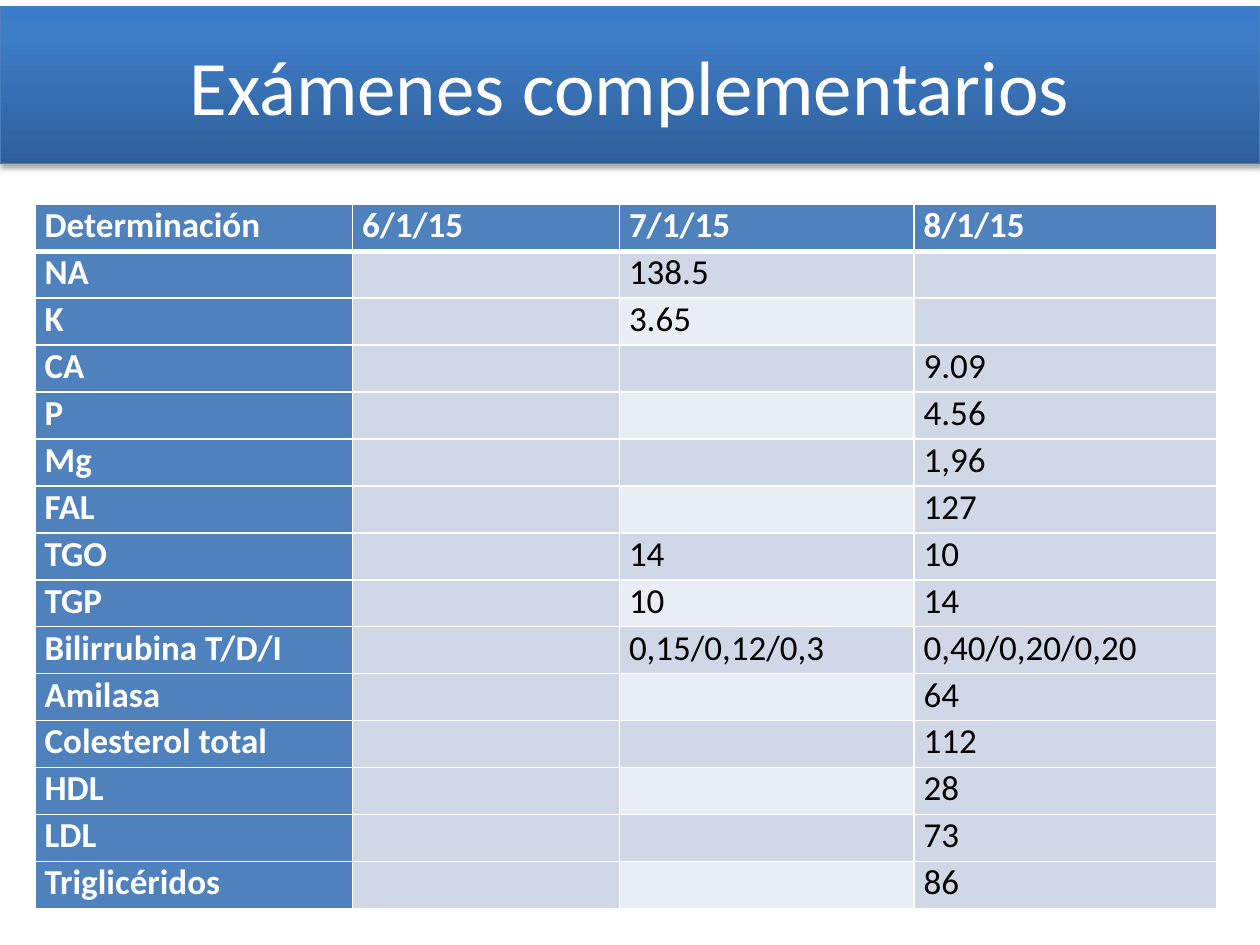
import pptx
import pptx.dml.color
import pptx.enum.shapes
import pptx.enum.text
import pptx.oxml.ns
import pptx.util
from lxml import etree
from copy import deepcopy

Cm = pptx.util.Cm
Pt = pptx.util.Pt
qn = pptx.oxml.ns.qn

FONT = "Calibri"
COLORS = {
    "white": "FFFFFF",
    "black": "000000",
    "header": "4F81BD",
    "band": "D0D8E8",
    "light_band": "E9EDF4",
    "title_line": "4B7EBC",
}
TITLE_STOPS = [(0, "2F5F99"), (0.8, "3D7CC7"), (1, "3A7CCB")]
COLUMN_WIDTHS = [6.4, 5.38, 5.94, 6.1]
ROW_HEIGHT = 0.946
RESULTS = [
    ("Determinación", "6/1/15", "7/1/15", "8/1/15"),
    ("NA", "", "138.5", ""),
    ("K", "", "3.65", ""),
    ("CA", "", "", "9.09"),
    ("P", "", "", "4.56"),
    ("Mg", "", "", "1,96"),
    ("FAL", "", "", "127"),
    ("TGO", "", "14", "10"),
    ("TGP", "", "10", "14"),
    ("Bilirrubina T/D/I", "", "0,15/0,12/0,3", "0,40/0,20/0,20"),
    ("Amilasa", "", "", "64"),
    ("Colesterol total", "", "", "112"),
    ("HDL", "", "", "28"),
    ("LDL", "", "", "73"),
    ("Triglicéridos", "", "", "86"),
]


def rgb(hex_color):
    return pptx.dml.color.RGBColor.from_string(hex_color)


def format_text(paragraph, size, color, bold=False):
    paragraph.font.size = Pt(size)
    for span in paragraph.runs:
        span.font.name = FONT
        span.font.size = Pt(size)
        span.font.bold = bold
        span.font.color.rgb = rgb(color)


def fill_gradient(shape, stops):
    shape.fill.gradient()
    shape.fill.gradient_angle = 90
    stop_list = shape.element.spPr.find(qn("a:gradFill")).find(qn("a:gsLst"))
    while len(stop_list) < len(stops):
        stop_list.append(deepcopy(stop_list[0]))
    for stop, (position, color) in zip(shape.fill.gradient_stops, stops):
        stop.position = position
        stop.color.rgb = rgb(color)


def add_shadow(shape):
    shape.shadow.inherit = False
    effects = shape.element.spPr.find(qn("a:effectLst"))
    shadow = etree.SubElement(
        effects, qn("a:outerShdw"), blurRad=str(Pt(3.1)), dist=str(Pt(1.8)),
        dir="5400000", rotWithShape="0")
    color = etree.SubElement(shadow, qn("a:srgbClr"), val=COLORS["black"])
    etree.SubElement(color, qn("a:alpha"), val="35000")


def add_title(page, text):
    box = page.shapes.add_shape(
        pptx.enum.shapes.MSO_SHAPE.RECTANGLE, Cm(0), Cm(0.13), Cm(25.4), Cm(3.17))
    fill_gradient(box, TITLE_STOPS)
    box.line.color.rgb = rgb(COLORS["title_line"])
    box.line.width = Pt(0.75)
    add_shadow(box)
    box.text_frame.text = text
    box.text_frame.vertical_anchor = pptx.enum.text.MSO_ANCHOR.MIDDLE
    paragraph = box.text_frame.paragraphs[0]
    paragraph.alignment = pptx.enum.text.PP_ALIGN.CENTER
    format_text(paragraph, 44, COLORS["white"])


def set_borders(cell, widths):
    properties = cell._tc.get_or_add_tcPr()
    for index, (side, width) in enumerate(widths.items()):
        line = etree.Element(qn("a:ln" + side), w=str(Pt(width)))
        fill = etree.SubElement(line, qn("a:solidFill"))
        etree.SubElement(fill, qn("a:srgbClr"), val=COLORS["white"])
        properties.insert(index, line)


def cell_color(row, column):
    if row == 0 or column == 0:
        return COLORS["header"]
    if column == 2 and row % 2 == 0:
        return COLORS["light_band"]
    return COLORS["band"]


def format_cell(cell, row, column, text):
    heading = row == 0 or column == 0
    cell.margin_left = cell.margin_right = Cm(0.19)
    cell.margin_top = cell.margin_bottom = 0
    cell.fill.solid()
    cell.fill.fore_color.rgb = rgb(cell_color(row, column))
    set_borders(cell, {"L": 1, "R": 1, "T": 3 if row == 1 else 1,
                       "B": 3 if row == 0 else 1})
    cell.text_frame.text = text
    color = COLORS["white"] if heading else COLORS["black"]
    format_text(cell.text_frame.paragraphs[0], 20, color, heading)


def add_results_table(page, results):
    table = page.shapes.add_table(
        len(results), len(COLUMN_WIDTHS), Cm(0.71), Cm(4.12),
        Cm(sum(COLUMN_WIDTHS)), Cm(ROW_HEIGHT * len(results))).table
    for column, width in zip(table.columns, COLUMN_WIDTHS):
        column.width = Cm(width)
    for row, values in enumerate(results):
        table.rows[row].height = Cm(ROW_HEIGHT)
        for column, text in enumerate(values):
            format_cell(table.cell(row, column), row, column, text)


def main():
    deck = pptx.Presentation()
    deck.slide_width = Cm(25.4)
    deck.slide_height = Cm(19.05)
    page = deck.slides.add_slide(deck.slide_layouts[6])
    add_title(page, "Exámenes complementarios")
    add_results_table(page, RESULTS)
    deck.save("out.pptx")


if __name__ == "__main__":
    main()
